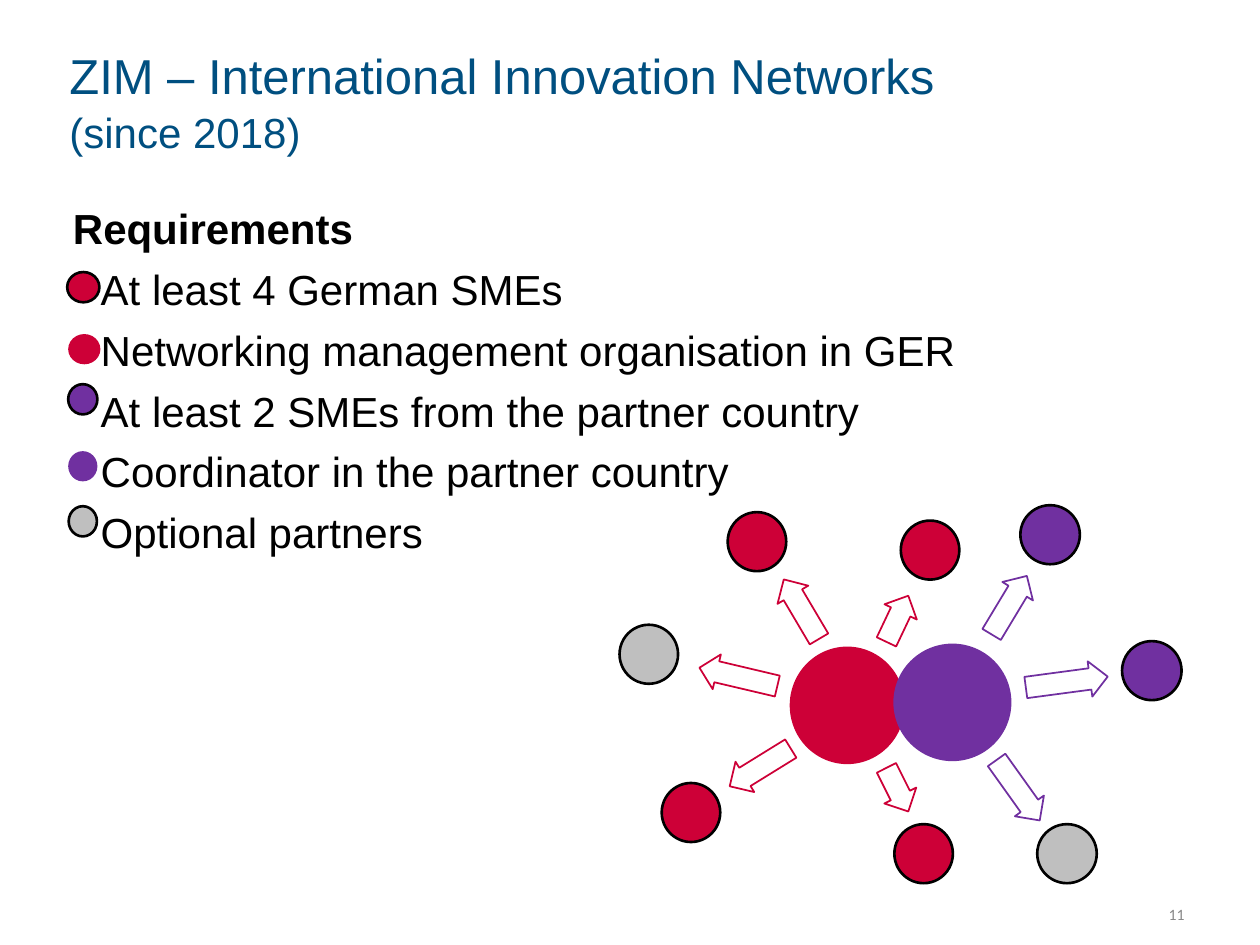
from math import atan2, degrees, hypot

from pptx import Presentation
from pptx.dml.color import RGBColor
from pptx.enum.shapes import MSO_SHAPE
from pptx.enum.text import MSO_ANCHOR, MSO_AUTO_SIZE, PP_ALIGN
from pptx.oxml.ns import qn
from pptx.util import Cm, Pt

COLOURS = {"title": "004F80", "text": "000000", "german": "CD0037",
           "partner": "7030A0", "optional": "BFBFBF", "number": "898989"}

TITLE = [("ZIM – International Innovation Networks", 28), ("(since 2018)", 24)]
HEADING = "Requirements"
# text, marker colour, marker outlined, marker centre x and y, marker width (cm)
REQUIREMENTS = [
    ("At least 4 German SMEs", "german", True, 1.68, 5.79, 0.65),
    ("Networking management organisation in GER", "german", False, 1.70, 7.04, 0.65),
    ("At least 2 SMEs from the partner country", "partner", True, 1.67, 8.05, 0.59),
    ("Coordinator in the partner country", "partner", False, 1.67, 9.40, 0.59),
    ("Optional partners", "optional", True, 1.67, 10.51, 0.57),
]
MARKER_HEIGHT = 0.61

# hub centre, members (colour, centre) and arrows (tail, tip), all in cm
NETWORKS = [
    {"colour": "german", "hub": (17.08, 14.22), "hub_size": (2.32, 2.37),
     "member_size": (1.18, 1.19),
     "members": [("german", (18.75, 11.09)), ("german", (15.26, 10.92)),
                 ("german", (13.93, 16.38)), ("german", (18.62, 17.21)),
                 ("optional", (13.08, 13.19))],
     "arrows": [((16.51, 12.88), (15.80, 11.68)), ((17.87, 12.94), (18.31, 12.01)),
                ((17.87, 15.48), (18.31, 16.36)), ((15.94, 15.09), (14.71, 15.85)),
                ((15.67, 13.83), (14.10, 13.46))]},
    {"colour": "partner", "hub": (19.20, 14.16), "hub_size": (2.38, 2.37),
     "member_size": (1.20, 1.19),
     "members": [("partner", (23.22, 13.52)), ("optional", (21.51, 17.21)),
                 ("partner", (21.17, 10.78))],
     "arrows": [((19.99, 12.79), (20.70, 11.61)), ((20.09, 15.32), (20.96, 16.54)),
                ((20.68, 13.86), (22.33, 13.64))]},
]
ARROW_WIDTH = 0.72

FRAME_FORMAT = {"word_wrap": True, "auto_size": MSO_AUTO_SIZE.NONE,
                "margin_left": Cm(0.1), "margin_right": Cm(0.1),
                "margin_top": Cm(0.1), "margin_bottom": Cm(0.1)}


def rgb(name):
    return RGBColor.from_string(COLOURS[name])


def set_all(target, values):
    for name, value in values.items():
        setattr(target, name, value)


def place(shape, left, top, width, height):
    set_all(shape, {"left": Cm(left), "top": Cm(top),
                    "width": Cm(width), "height": Cm(height)})


def set_font(font, size, colour, name="Arial", bold=False):
    set_all(font, {"name": name, "size": Pt(size), "bold": bold})
    font.color.rgb = rgb(colour)


def add_centred(shapes, kind, centre, size):
    (x, y), (width, height) = centre, size
    shape = shapes.add_shape(kind, Cm(x - width / 2), Cm(y - height / 2),
                             Cm(width), Cm(height))
    shape.shadow.inherit = False
    return shape


def add_circle(shapes, centre, size, colour, outlined):
    circle = add_centred(shapes, MSO_SHAPE.OVAL, centre, size)
    circle.fill.solid()
    circle.fill.fore_color.rgb = rgb(colour)
    if outlined:
        circle.line.color.rgb = rgb("text")
        circle.line.width = Pt(1.5)
    else:
        circle.line.fill.background()


def add_arrow(shapes, tail, tip, colour):
    """Draw a hollow block arrow, turned so that it runs from tail to tip."""
    across, down = tip[0] - tail[0], tip[1] - tail[1]
    centre = (tail[0] + across / 2, tail[1] + down / 2)
    arrow = add_centred(shapes, MSO_SHAPE.RIGHT_ARROW, centre,
                        (hypot(across, down), ARROW_WIDTH))
    arrow.rotation = degrees(atan2(down, across))
    arrow.adjustments[0] = 0.6
    arrow.adjustments[1] = 0.5
    arrow.fill.background()
    arrow.line.color.rgb = rgb(colour)
    arrow.line.width = Pt(1)


def fill_title(shape):
    place(shape, 1.3, 0.91, 20.4, 2.21)
    set_all(shape.text_frame, {**FRAME_FORMAT, "vertical_anchor": MSO_ANCHOR.MIDDLE})
    paragraph = shape.text_frame.paragraphs[0]
    set_all(paragraph, {"alignment": PP_ALIGN.LEFT, "line_spacing": 1.05})
    for index, (text, size) in enumerate(TITLE):
        if index:
            paragraph.add_line_break()
        run = paragraph.add_run()
        run.text = text
        set_font(run.font, size, "title")


def fill_requirements(shape):
    place(shape, 1.37, 3.94, 19.28, 7.7)
    frame = shape.text_frame
    set_all(frame, FRAME_FORMAT)
    for index, text in enumerate([HEADING] + [item[0] for item in REQUIREMENTS]):
        paragraph = frame.add_paragraph() if index else frame.paragraphs[0]
        properties = paragraph._p.get_or_add_pPr()
        properties.set("marL", str(Cm(0.56) if index else 0))
        properties.set("indent", "0")
        properties.append(properties.makeelement(qn("a:buNone"), {}))
        set_all(paragraph, {"line_spacing": 1.05,
                            "space_before": Pt(4.5 if index else 0)})
        run = paragraph.add_run()
        run.text = text
        set_font(run.font, 24, "text", bold=index == 0)


def add_network(shapes, network):
    group = shapes.add_group_shape().shapes
    add_circle(group, network["hub"], network["hub_size"], network["colour"], False)
    for tail, tip in network["arrows"]:
        add_arrow(group, tail, tip, network["colour"])
    for colour, centre in network["members"]:
        add_circle(group, centre, network["member_size"], colour, True)


def add_slide_number(shapes, number):
    box = shapes.add_textbox(Cm(18.21), Cm(17.93), Cm(5.92), Cm(1.02))
    set_all(box.text_frame, {"word_wrap": True, "vertical_anchor": MSO_ANCHOR.MIDDLE})
    paragraph = box.text_frame.paragraphs[0]
    paragraph.alignment = PP_ALIGN.RIGHT
    run = paragraph.add_run()
    run.text = number
    set_font(run.font, 9, "number", "Calibri")


def main():
    presentation = Presentation()
    set_all(presentation, {"slide_width": Cm(25.4), "slide_height": Cm(19.05)})
    slide = presentation.slides.add_slide(presentation.slide_layouts[1])
    fill_title(slide.shapes.title)
    fill_requirements(slide.placeholders[1])
    for _, colour, outlined, x, y, width in REQUIREMENTS:
        add_circle(slide.shapes, (x, y), (width, MARKER_HEIGHT), colour, outlined)
    for network in NETWORKS:
        add_network(slide.shapes, network)
    add_slide_number(slide.shapes, "11")
    presentation.save("out.pptx")


if __name__ == "__main__":
    main()
